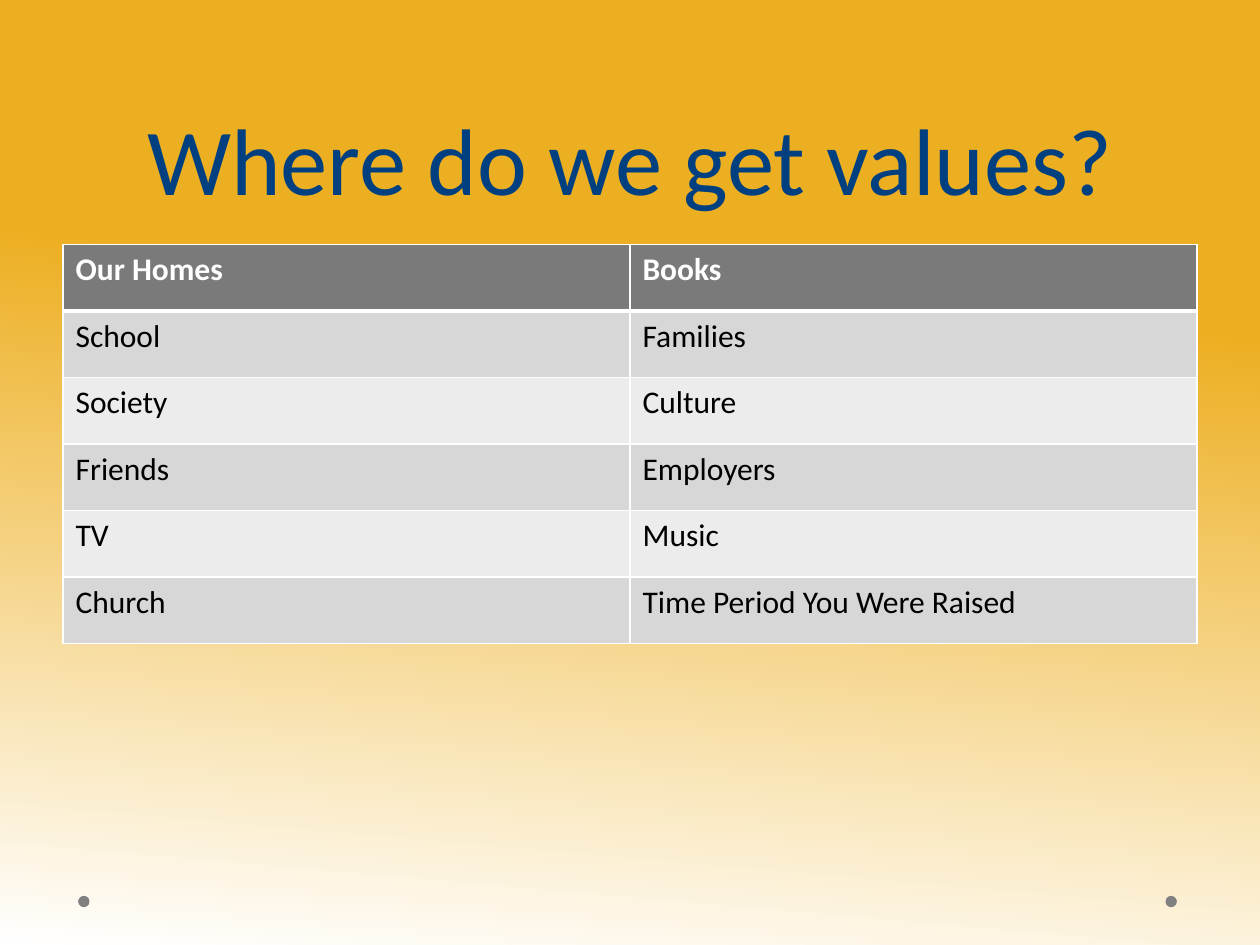
from lxml.etree import SubElement, Element
from pptx import Presentation
from pptx.dml.color import RGBColor
from pptx.enum.shapes import MSO_SHAPE as Shape
from pptx.enum.text import MSO_ANCHOR as Anchor, PP_ALIGN as Align
from pptx.oxml.ns import qn
from pptx.util import Pt

PX = 9144  # EMU per px, 100 px to the inch
GOLD = RGBColor(0xED, 0xAF, 0x22)
WHITE = RGBColor(0xFF, 0xFF, 0xFF)
BLACK = RGBColor(0x00, 0x00, 0x00)
NAVY = RGBColor(0x00, 0x40, 0x80)
DOT_GRAY = RGBColor(0x80, 0x80, 0x80)
HEADER_GRAY = RGBColor(0x7A, 0x7A, 0x7A)
BANDS = RGBColor(0xEC, 0xEC, 0xEC), RGBColor(0xD7, 0xD7, 0xD7)

TITLE_FONT = {"name": "Calibri", "size": Pt(54), "bold": False}
HEADER_FONT = {"name": "Calibri", "size": Pt(18), "bold": True}
BODY_FONT = {**HEADER_FONT, "bold": False}

VALUE_SOURCES = [
    ("Our Homes", "Books"),
    ("School", "Families"),
    ("Society", "Culture"),
    ("Friends", "Employers"),
    ("TV", "Music"),
    ("Church", "Time Period You Were Raised"),
]


def emu(*lengths):
    return [round(length * PX) for length in lengths]


def write(paragraph, text, font_format, color):
    run = paragraph.add_run()
    run.text = text
    for attribute, value in font_format.items():
        setattr(run.font, attribute, value)
    run.font.color.rgb = color


def paint_background(slide):
    fill = slide.background.fill
    fill.gradient()
    fill.gradient_angle = 265
    for stop, position, color in zip(fill.gradient_stops, (0.32, 1), (GOLD, WHITE)):
        stop.position = position
        stop.color.rgb = color


def add_footer_dots(slide, left, top, width, size):
    for dot_left in (left, left + width - size):
        dot = slide.shapes.add_shape(Shape.OVAL, *emu(dot_left, top, size, size))
        dot.shadow.inherit = False
        dot.fill.solid()
        dot.fill.fore_color.rgb = DOT_GRAY
        dot.line.fill.background()


def add_title(slide, left, top, width, height):
    frame = slide.shapes.add_textbox(*emu(left, top, width, height)).text_frame
    frame.word_wrap = True
    frame.vertical_anchor = Anchor.BOTTOM
    heading = frame.paragraphs[0]
    heading.alignment = Align.CENTER
    heading.line_spacing = Pt(58)
    write(heading, "Where do we get values?", TITLE_FONT, NAVY)


def set_borders(cell, widths):
    properties = cell._tc.get_or_add_tcPr()
    for index, (side, width) in enumerate(widths.items()):
        border = Element(qn(f"a:ln{side}"), w=str(Pt(width)))
        fill = SubElement(border, qn("a:solidFill"))
        SubElement(fill, qn("a:srgbClr"), val=str(WHITE))
        properties.insert(index, border)


def add_values_table(slide, left, top, width, height):
    row_count, column_count = len(VALUE_SOURCES), len(VALUE_SOURCES[0])
    table = slide.shapes.add_table(
        row_count, column_count, *emu(left, top, width, height)).table
    for r, row in enumerate(VALUE_SOURCES):
        is_header = r == 0
        for c, source in enumerate(row):
            cell = table.cell(r, c)
            cell.fill.solid()
            cell.fill.fore_color.rgb = HEADER_GRAY if is_header else BANDS[r % 2]
            # A thick rule separates the header from the body
            set_borders(cell, {"L": 1, "R": 1, "T": 3 if r == 1 else 1,
                               "B": 3 if is_header else 1})
            write(cell.text_frame.paragraphs[0], source,
                  HEADER_FONT if is_header else BODY_FONT,
                  WHITE if is_header else BLACK)


def main():
    deck = Presentation()
    deck.slide_width, deck.slide_height = emu(1000, 750)
    slide = deck.slides.add_slide(deck.slide_layouts[6])
    paint_background(slide)
    add_footer_dots(slide, 62, 711, 872, 9)
    add_title(slide, 50, 0, 900, 175)
    add_values_table(slide, 50, 194, 900, 317)
    deck.save("out.pptx")


if __name__ == "__main__":
    main()
